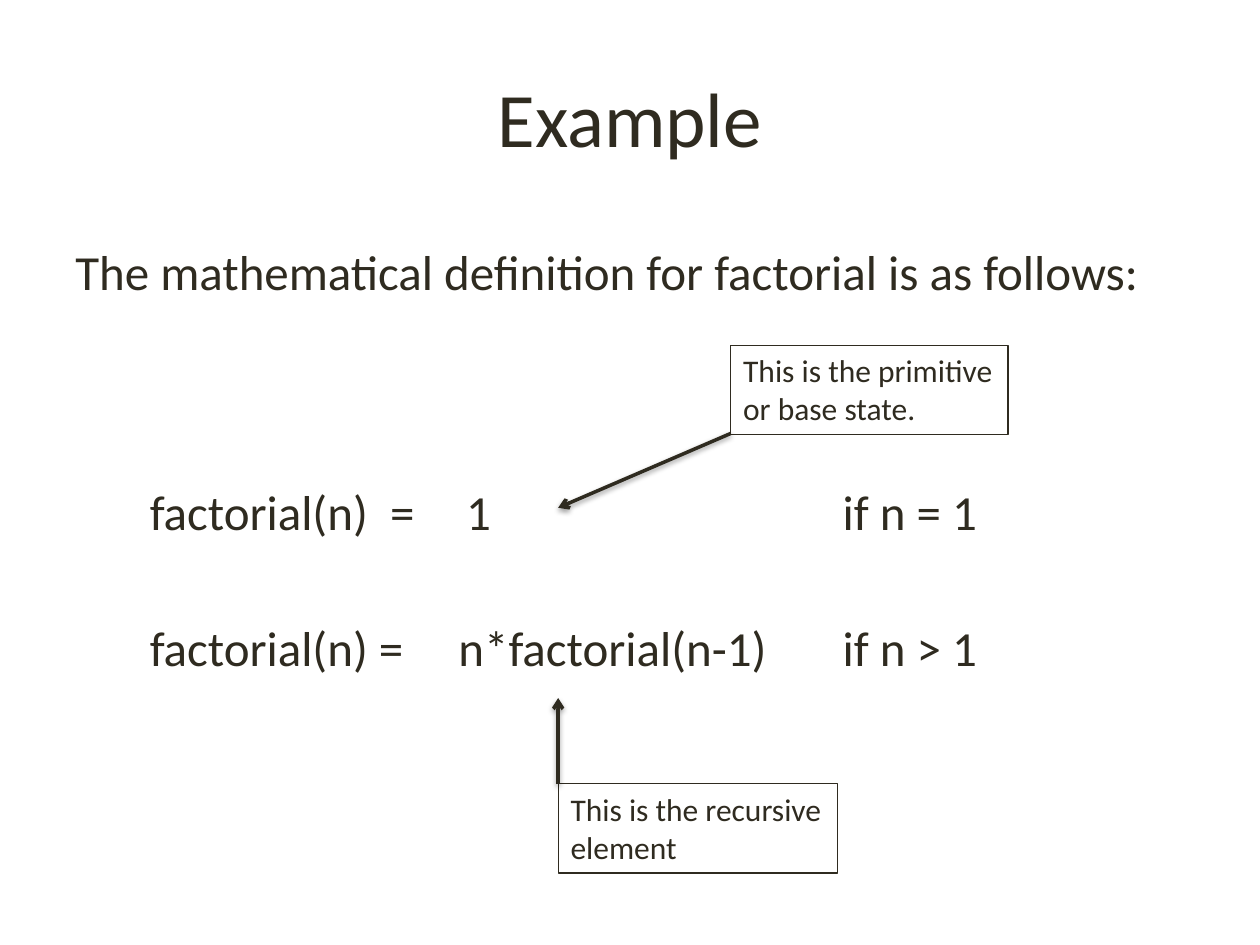
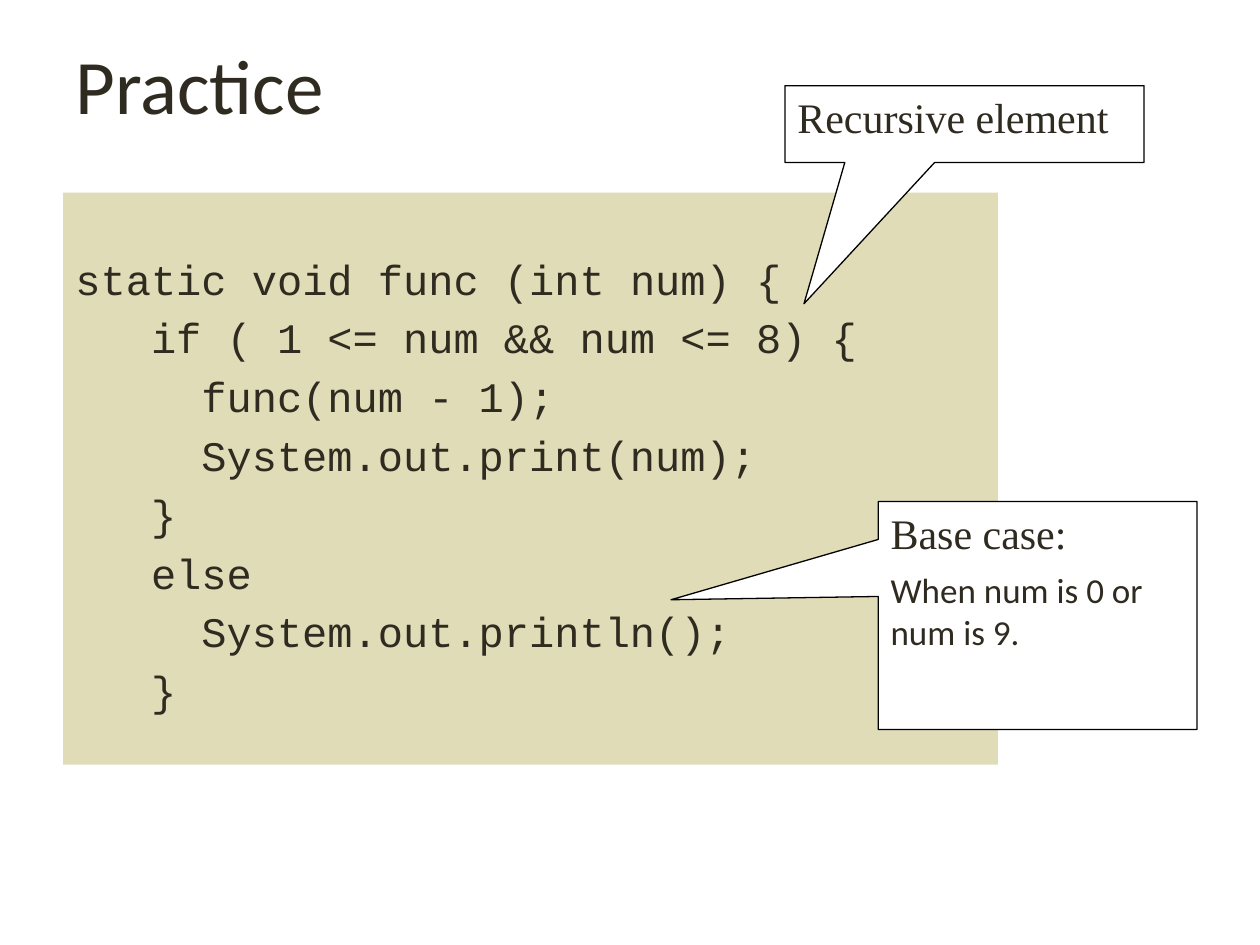
from dataclasses import dataclass
from typing import Optional

from lxml import etree
from pptx import Presentation
from pptx.dml.color import RGBColor
from pptx.enum.shapes import MSO_CONNECTOR, MSO_SHAPE
from pptx.enum.text import MSO_ANCHOR, PP_ALIGN
from pptx.oxml import parse_xml
from pptx.oxml.ns import qn
from pptx.util import Inches, Pt

RECT = MSO_SHAPE.RECTANGLE
CALLOUT = MSO_SHAPE.RECTANGULAR_CALLOUT
STRAIGHT = MSO_CONNECTOR.STRAIGHT
TOP, MIDDLE = MSO_ANCHOR.TOP, MSO_ANCHOR.MIDDLE
LEFT, CENTER = PP_ALIGN.LEFT, PP_ALIGN.CENTER

INK, BLACK, WHITE, SAND = "2F2B20", "000000", "FFFFFF", "DFDCB7"
SANS, SERIF, MONO = "Calibri", "Times New Roman", "Courier New"
CODE_CHAR = 0.2
SHADOW = (
    '<a:effectLst xmlns:a="http://schemas.openxmlformats.org/drawingml/2006/main">'
    '<a:outerShdw blurRad="39370" dist="20320" dir="5400000" rotWithShape="0">'
    '<a:srgbClr val="000000"><a:alpha val="38000"/></a:srgbClr>'
    '</a:outerShdw></a:effectLst>'
)


@dataclass(frozen=True)
class Para:
    text: str
    size: float
    font: str = SANS
    align: PP_ALIGN = LEFT
    after: float = 0
    indent: float = 0


@dataclass(frozen=True)
class Box:
    at: tuple[float, float, float, float]
    paras: list[Para]
    kind: Optional[MSO_SHAPE] = None
    fill: Optional[str] = None
    line: Optional[str] = None
    anchor: MSO_ANCHOR = TOP
    wrap: bool = True
    inset_top: float = 0.05
    adjust: tuple[float, ...] = ()


@dataclass(frozen=True)
class Arrow:
    start: tuple[float, float]
    end: tuple[float, float]


def color(value: str) -> RGBColor:
    return RGBColor.from_string(value)


def apply(target, values: dict) -> None:
    for name, value in values.items():
        setattr(target, name, value)


def write_para(p, para: Para) -> None:
    apply(p, {"alignment": para.align, "space_before": Pt(0), "space_after": Pt(para.after)})
    pPr = p._p.get_or_add_pPr()
    pPr.set("marL", str(Inches(para.indent)))
    pPr.set("indent", "0")
    r = p.add_run()
    r.text = para.text
    apply(r.font, {"name": para.font, "size": Pt(para.size)})
    r.font.color.rgb = color(INK)


def draw_box(s, box: Box) -> None:
    at = [Inches(v) for v in box.at]
    if box.kind is None:
        sp = s.shapes.add_textbox(*at)
    else:
        sp = s.shapes.add_shape(box.kind, *at)
        sp.shadow.inherit = False
    for i, value in enumerate(box.adjust):
        sp.adjustments[i] = value
    if box.fill:
        sp.fill.solid()
        sp.fill.fore_color.rgb = color(box.fill)
    else:
        sp.fill.background()
    if box.line:
        sp.line.color.rgb = color(box.line)
        sp.line.width = Pt(0.75)
    else:
        sp.line.fill.background()
    tf = sp.text_frame
    apply(tf, {"word_wrap": box.wrap, "vertical_anchor": box.anchor,
               "margin_top": Inches(box.inset_top)})
    for i, para in enumerate(box.paras):
        write_para(tf.add_paragraph() if i else tf.paragraphs[0], para)


def draw_arrow(s, arrow: Arrow) -> None:
    sp = s.shapes.add_connector(STRAIGHT, *(Inches(v) for v in arrow.start + arrow.end))
    sp.line.color.rgb = color(INK)
    sp.line.width = Pt(2)
    etree.SubElement(sp.line._get_or_add_ln(), qn("a:tailEnd"), type="arrow")
    sp._element.spPr.append(parse_xml(SHADOW))


def title(text: str, top: float, align: PP_ALIGN) -> Box:
    return Box((0.5, top, 9, 1.25), [Para(text, 44, align=align)], anchor=MIDDLE)


def note(at: tuple[float, float, float, float], *lines: str) -> Box:
    return Box(at, [Para(text, 18) for text in lines], RECT, line=INK, wrap=False)


def formula_column(left: float, width: float, base: str, recursive: str,
                   base_indent: float = 0) -> Box:
    return Box((left, 3.77, width, 1.92),
               [Para(base, 28, after=44, indent=base_indent), Para(recursive, 28)])


def callout(at: tuple[float, float, float, float], tip: tuple[float, float],
            paras: list[Para]) -> Box:
    return Box(at, paras, CALLOUT, WHITE, BLACK, adjust=tip)


def code(indent: int, text: str) -> Para:
    return Para(text, 24, MONO, after=4.8, indent=indent * CODE_CHAR)


EXAMPLE = [
    title("Example", 0.3, CENTER),
    Box((0.5, 1.87, 9, 0.6),
        [Para("The mathematical definition for factorial is as follows:", 28)]),
    note((5.8, 2.74, 2.2, 0.71), "This is the primitive", "or base state."),
    note((4.43, 6.22, 2.22, 0.71), "This is the recursive", "element"),
    formula_column(1.09, 2.45, "factorial(n)  =", "factorial(n) ="),
    formula_column(3.54, 3.05, "1", "n*factorial(n-1)", base_indent=0.06),
    formula_column(6.59, 2, "if n = 1", "if n > 1"),
    Arrow((5.8, 3.44), (4.43, 4.03)),
    Arrow((4.43, 6.22), (4.43, 5.54)),
]

PRACTICE = [
    title("Practice", 0.04, LEFT),
    Box((0.5, 1.53, 7.42, 4.54), [
        code(0, "static void func (int num) {"),
        code(3, "if ( 1 <= num && num <= 8) {"),
        code(5, "func(num - 1);"),
        code(5, "System.out.print(num);"),
        code(3, "}"),
        code(3, "else"),
        code(5, "System.out.println();"),
        code(3, "}"),
    ], RECT, SAND, inset_top=0.48),
    callout((6.23, 0.68, 2.85, 0.61), (-0.447, 2.338),
            [Para("Recursive element", 24, SERIF, after=6)]),
    callout((6.97, 3.98, 2.53, 1.81), (-1.15, -0.069), [
        Para("Base case:", 24, SERIF, after=6),
        Para("When num is 0 or num is 9.", 20, after=6),
    ]),
]


def main() -> None:
    prs = Presentation()
    apply(prs, {"slide_width": Inches(10), "slide_height": Inches(7.5)})
    for items in (EXAMPLE, PRACTICE):
        s = prs.slides.add_slide(prs.slide_layouts[6])
        for item in items:
            if isinstance(item, Arrow):
                draw_arrow(s, item)
            else:
                draw_box(s, item)
    prs.save("out.pptx")


if __name__ == "__main__":
    main()
